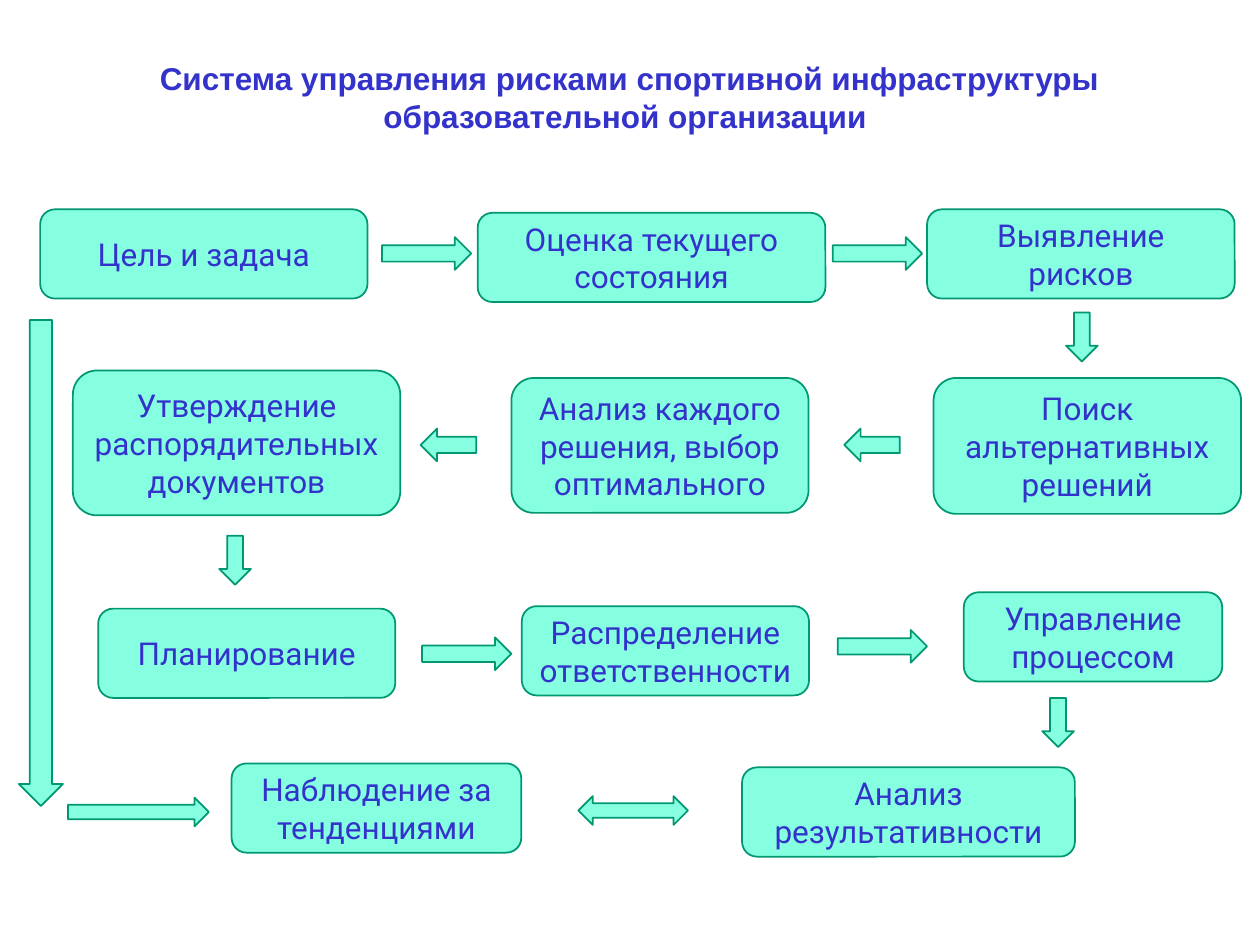
from typing import NamedTuple

from pptx import Presentation
from pptx.dml.color import RGBColor
from pptx.enum.shapes import MSO_SHAPE
from pptx.enum.text import MSO_ANCHOR, PP_ALIGN
from pptx.util import Cm, Pt

BLUE = RGBColor(0x33, 0x33, 0xCC)
MINT = RGBColor(0x85, 0xFF, 0xE0)
GREEN = RGBColor(0x00, 0x97, 0x71)

TITLE = "Система управления рисками спортивной инфраструктуры образовательной организации "
TITLE_FONT = {"name": "Arial", "size": Pt(18), "bold": True}
STEP_FONT = {"name": "Roboto", "size": Pt(18), "bold": False}

STEP_HEIGHT = 1.8
SHORT_RIGHT = (1.8, 0.66)
SHORT_LEFT = (1.12, 0.66)
SHORT_DOWN = (0.64, 0.99)


class Step(NamedTuple):
    text: str
    left: float
    top: float
    width: float
    height: float = STEP_HEIGHT


class Arrow(NamedTuple):
    kind: MSO_SHAPE
    left: float
    top: float
    size: tuple[float, float]


STEPS = [
    Step("Цель и задача", 0.81, 4.22, 6.6),
    Step("Оценка текущего состояния", 9.63, 4.29, 7.01),
    Step("Выявление рисков", 18.69, 4.22, 6.2),
    Step("Утверждение распорядительных документов", 1.47, 7.47, 6.6, 2.92),
    Step("Анализ каждого решения, выбор оптимального", 10.31, 7.62, 5.99, 2.72),
    Step("Поиск альтернативных решений", 18.82, 7.62, 6.2, 2.74),
    Step("Планирование", 1.98, 12.27, 5.99),
    Step("Распределение ответственности", 10.52, 12.22, 5.79),
    Step("Управление процессом", 19.43, 11.94, 5.21),
    Step("Анализ результативности", 14.96, 15.47, 6.71),
    Step("Наблюдение за тенденциями", 4.67, 15.39, 5.84),
]

ARROWS = [
    Arrow(MSO_SHAPE.DOWN_ARROW, 0.38, 6.45, (0.89, 9.8)),
    Arrow(MSO_SHAPE.RIGHT_ARROW, 1.37, 16.08, (2.84, 0.58)),
    Arrow(MSO_SHAPE.RIGHT_ARROW, 7.7, 4.78, SHORT_RIGHT),
    Arrow(MSO_SHAPE.RIGHT_ARROW, 16.89, 12.7, SHORT_RIGHT),
    Arrow(MSO_SHAPE.RIGHT_ARROW, 16.79, 4.78, SHORT_RIGHT),
    Arrow(MSO_SHAPE.RIGHT_ARROW, 8.51, 12.85, SHORT_RIGHT),
    Arrow(MSO_SHAPE.LEFT_ARROW, 8.48, 8.64, SHORT_LEFT),
    Arrow(MSO_SHAPE.LEFT_ARROW, 17.02, 8.64, SHORT_LEFT),
    Arrow(MSO_SHAPE.DOWN_ARROW, 4.42, 10.8, SHORT_DOWN),
    Arrow(MSO_SHAPE.DOWN_ARROW, 21.01, 14.07, SHORT_DOWN),
    Arrow(MSO_SHAPE.DOWN_ARROW, 21.49, 6.3, SHORT_DOWN),
    Arrow(MSO_SHAPE.LEFT_RIGHT_ARROW, 11.66, 16.05, (2.21, 0.58)),
]


def write_text(sp, text: str, anchor: MSO_ANCHOR, font: dict) -> None:
    tf = sp.text_frame
    tf.word_wrap = True
    tf.vertical_anchor = anchor
    p = tf.paragraphs[0]
    p.alignment = PP_ALIGN.CENTER
    r = p.add_run()
    r.text = text
    for name, value in font.items():
        setattr(r.font, name, value)
    r.font.color.rgb = BLUE


def add_mint_shape(s, kind: MSO_SHAPE, left: float, top: float, width: float, height: float):
    sp = s.shapes.add_shape(kind, Cm(left), Cm(top), Cm(width), Cm(height))
    sp.shadow.inherit = False
    sp.fill.solid()
    sp.fill.fore_color.rgb = MINT
    sp.line.color.rgb = GREEN
    sp.line.width = Pt(1)
    return sp


def add_title(s) -> None:
    title = s.shapes.title
    title.left, title.top, title.width, title.height = Cm(2.29), Cm(1.07), Cm(20.8), Cm(1.8)
    write_text(title, TITLE, MSO_ANCHOR.TOP, TITLE_FONT)


def add_step(s, step: Step) -> None:
    sp = add_mint_shape(s, MSO_SHAPE.ROUNDED_RECTANGLE, step.left, step.top, step.width, step.height)
    write_text(sp, step.text, MSO_ANCHOR.MIDDLE, STEP_FONT)


def add_arrow(s, arrow: Arrow) -> None:
    add_mint_shape(s, arrow.kind, arrow.left, arrow.top, *arrow.size)


def main() -> None:
    prs = Presentation()
    prs.slide_width, prs.slide_height = Cm(25.4), Cm(19.05)
    s = prs.slides.add_slide(prs.slide_layouts[5])
    add_title(s)
    for step in STEPS:
        add_step(s, step)
    for arrow in ARROWS:
        add_arrow(s, arrow)
    prs.save("out.pptx")


if __name__ == "__main__":
    main()
